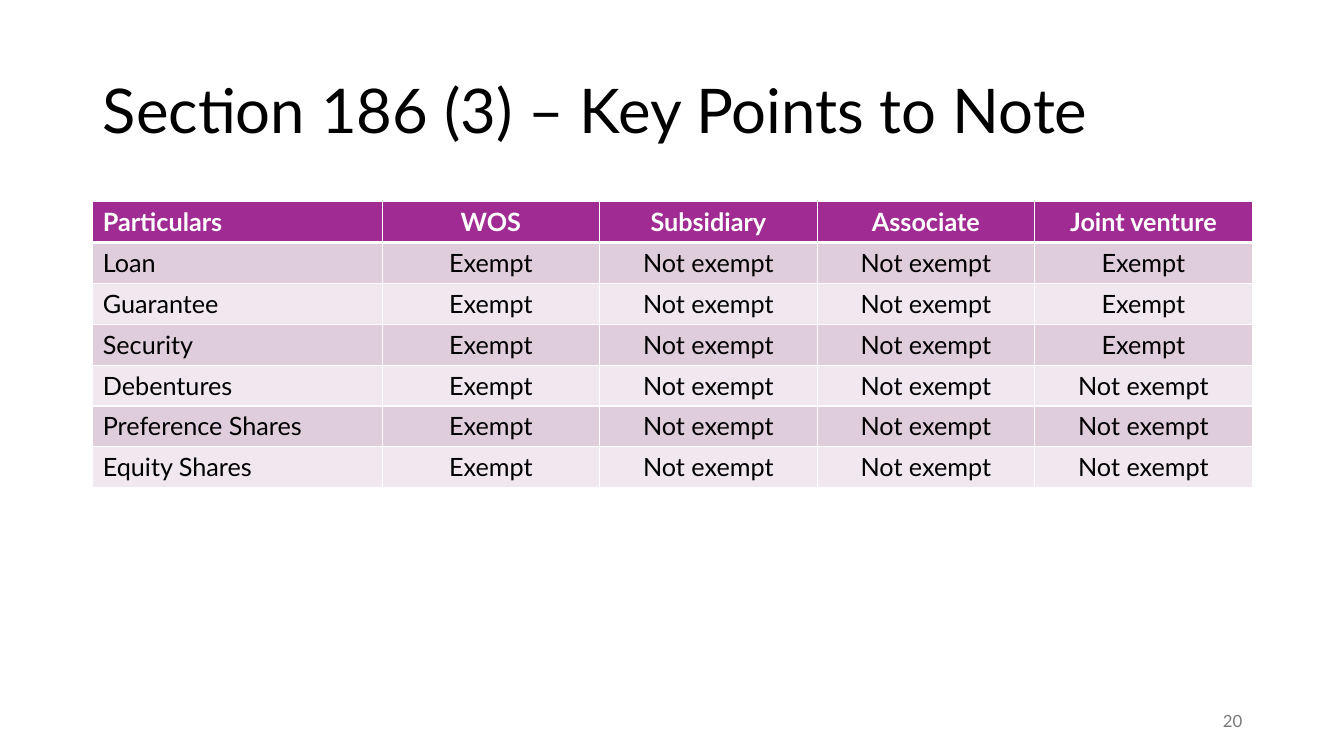
from dataclasses import dataclass

from lxml.etree import SubElement
from pptx import Presentation
from pptx.dml.color import RGBColor
from pptx.enum.text import MSO_ANCHOR as Anchor, MSO_AUTO_SIZE as AutoSize, PP_ALIGN as Align
from pptx.oxml.ns import qn
from pptx.util import Emu, Pt


@dataclass(frozen=True)
class Theme:
    font: str = "Lato"
    title_size: int = 44
    table_size: int = 18
    number_size: int = 12
    ink: str = "000000"
    paper: str = "FFFFFF"
    muted: str = "797979"
    header: str = "A02B93"
    bands: tuple = ("DFCDDC", "F0E8EE")
    rule: int = 1
    header_rule: int = 3


THEME = Theme()
PX_PER_INCH = 100
FIRST_COLUMN = 287

HEADINGS = ["Particulars", "WOS", "Subsidiary", "Associate", "Joint venture"]
YES, NO = "Exempt", "Not exempt"
EXEMPTIONS = [
    ["Loan", YES, NO, NO, YES],
    ["Guarantee", YES, NO, NO, YES],
    ["Security", YES, NO, NO, YES],
    ["Debentures", YES, NO, NO, NO],
    ["Preference Shares", YES, NO, NO, NO],
    ["Equity Shares", YES, NO, NO, NO],
]


def px(n):
    return Emu(n * 914400 // PX_PER_INCH)


def write(tf, text, size, color, align=Align.LEFT, bold=False):
    tf.text = text
    p = tf.paragraphs[0]
    p.alignment = align
    font = p.runs[0].font
    font.name, font.size, font.bold = THEME.font, Pt(size), bold
    font.color.rgb = RGBColor.from_string(color)
    return p


def set_borders(cell, **widths):
    """Draw cell borders in the paper colour; widths are points by side: L, R, T, B."""
    tc_pr = cell._tc.get_or_add_tcPr()
    for side, width in widths.items():
        ln = SubElement(tc_pr, qn(f"a:ln{side}"), w=str(Pt(width)))
        fill = SubElement(ln, qn("a:solidFill"))
        SubElement(fill, qn("a:srgbClr"), val=THEME.paper)


def add_title(s, text, box):
    title = s.shapes.title
    title.left, title.top, title.width, title.height = map(px, box)
    tf = title.text_frame
    tf.word_wrap, tf.auto_size = True, AutoSize.NONE
    tf.vertical_anchor = Anchor.MIDDLE
    write(tf, text, THEME.title_size, THEME.ink).line_spacing = 0.9


def add_exemption_table(s, rows, box):
    x, y, w, h = map(px, box)
    table = s.shapes.add_table(len(rows), len(rows[0]), x, y, w, h).table
    first, *others = table.columns
    first.width = px(FIRST_COLUMN)
    for column in others:
        column.width = (w - first.width) // len(others)

    for i, row in enumerate(rows):
        is_header = i == 0
        background = THEME.header if is_header else THEME.bands[(i - 1) % 2]
        color = THEME.paper if is_header else THEME.ink
        top = THEME.header_rule if i == 1 else THEME.rule
        bottom = THEME.header_rule if is_header else THEME.rule
        for j, text in enumerate(row):
            cell = table.cell(i, j)
            set_borders(cell, L=THEME.rule, R=THEME.rule, T=top, B=bottom)
            cell.fill.solid()
            cell.fill.fore_color.rgb = RGBColor.from_string(background)
            align = Align.CENTER if j else Align.LEFT
            write(cell.text_frame, text, THEME.table_size, color, align, is_header)


def add_page_number(s, number, box):
    tf = s.shapes.add_textbox(*map(px, box)).text_frame
    tf.word_wrap = True
    tf.vertical_anchor = Anchor.MIDDLE
    write(tf, str(number), THEME.number_size, THEME.muted, Align.RIGHT)


def main():
    prs = Presentation()
    prs.slide_width, prs.slide_height = px(1333), px(750)
    s = prs.slides.add_slide(prs.slide_layouts.get_by_name("Title Only"))
    add_title(s, "Section 186 (3) – Key Points to Note", (92, 40, 1150, 145))
    add_exemption_table(s, [HEADINGS, *EXEMPTIONS], (92, 200, 1150, 284))
    add_page_number(s, 20, (942, 695, 300, 40))
    prs.save("out.pptx")


if __name__ == "__main__":
    main()
